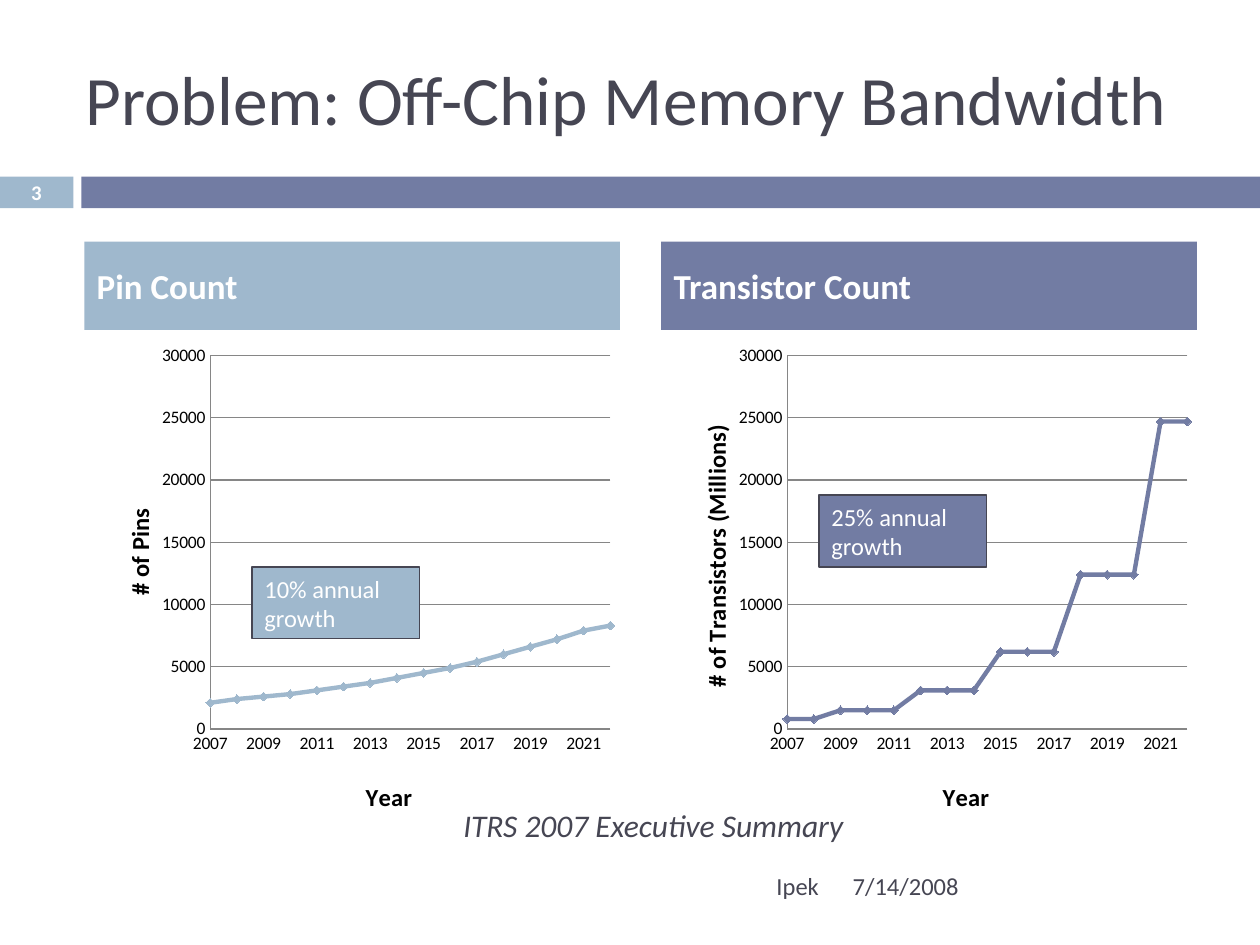
"""Build a slide that contrasts pin count growth with transistor count growth."""
import pptx
import pptx.chart.data
import pptx.dml.color
import pptx.enum.chart
import pptx.enum.shapes
import pptx.enum.text
import pptx.oxml
import pptx.oxml.ns
import pptx.util

Cm, Pt = pptx.util.Cm, pptx.util.Pt
ALIGN = pptx.enum.text.PP_ALIGN
ANCHOR = pptx.enum.text.MSO_ANCHOR
CHART = pptx.enum.chart

THEME = {
    "font": "Calibri",
    "sky": "9FB8CD", "slate": "727CA3", "ink": "464653",
    "white": "FFFFFF", "black": "000000", "grid": "868686",
    "title": 39.6, "head": 20, "source": 18, "note": 14, "page": 11.9, "tick": 10,
}
TITLE = "Problem: Off-Chip Memory Bandwidth"
YEARS = range(2007, 2023)
PANELS = [
    {"head": "Pin Count", "tone": "sky", "axis": "# of Pins", "top": 0.34,
     "note": "10% annual growth", "spot": (5.08, 11.43),
     "vals": [2100, 2400, 2600, 2800, 3100, 3400, 3700, 4100,
              4500, 4900, 5400, 6000, 6600, 7200, 7900, 8300]},
    {"head": "Transistor Count", "tone": "slate", "axis": "# of Transistors (Millions)",
     "top": 0.17, "note": "25% annual growth", "spot": (16.51, 9.98),
     "vals": [800] * 2 + [1500] * 3 + [3100] * 3 + [6200] * 3 + [12400] * 3 + [24700] * 2},
]
LABELS = [
    ("3", (0, 3.53, 1.47, 0.69), "page", "white", ALIGN.CENTER, {"bold": True}),
    ("ITRS 2007 Executive Summary", (9.09, 16.13, 8.2, 1.02), "source", "ink",
     ALIGN.LEFT, {"italic": True}),
    ("7/14/2008", (16.94, 17.35, 7.42, 1.02), "note", "ink", ALIGN.LEFT, {}),
    ("Ipek", (1.7, 17.35, 15.06, 1.02), "note", "ink", ALIGN.RIGHT, {}),
]
LEFT, STEP, WIDTH = 1.7, 11.63, 10.8
PLOT = {"x": 0.235, "y": 0.04, "w": 0.747, "h": 0.756}


def tint(name):
    return pptx.dml.color.RGBColor.from_string(THEME[name])


def style(font, size, tone, bold=False, italic=False):
    font.name, font.size = THEME["font"], Pt(THEME[size])
    font.bold, font.italic = bold, italic
    font.color.rgb = tint(tone)


def write(shape, text, size, tone, align=ALIGN.LEFT, **look):
    frame = shape.text_frame
    frame.text = text
    frame.word_wrap = True
    frame.auto_size = pptx.enum.text.MSO_AUTO_SIZE.NONE
    frame.vertical_anchor = ANCHOR.MIDDLE
    para = frame.paragraphs[0]
    para.alignment = align
    style(para.runs[0].font, size, tone, **look)
    return para


def block(slide, box, tone, edge=None):
    rect = pptx.enum.shapes.MSO_SHAPE.RECTANGLE
    shape = slide.shapes.add_shape(rect, *map(Cm, box))
    shape.shadow.inherit = False
    shape.fill.solid()
    shape.fill.fore_color.rgb = tint(tone)
    if edge:
        shape.line.color.rgb = tint(edge)
        shape.line.width = Pt(0.75)
    else:
        shape.line.fill.background()
    return shape


def layout(parent, spots, inner=False):
    for old in parent.findall(pptx.oxml.ns.qn("c:layout")):
        parent.remove(old)
    target = '<c:layoutTarget val="inner"/>' if inner else ""
    modes = "".join(f'<c:{key}Mode val="edge"/>' for key in "xy")
    sizes = "".join(f'<c:{key} val="{val}"/>' for key, val in spots.items())
    node = pptx.oxml.parse_xml(
        f'<c:layout {pptx.oxml.ns.nsdecls("c")}><c:manualLayout>'
        f"{target}{modes}{sizes}</c:manualLayout></c:layout>")
    if inner:
        parent.insert(0, node)
    else:
        parent.find(pptx.oxml.ns.qn("c:tx")).addnext(node)


def scale(axis, text, spot, low, high, unit):
    axis.minimum_scale, axis.maximum_scale, axis.major_unit = low, high, unit
    axis.major_tick_mark = axis.minor_tick_mark = CHART.XL_TICK_MARK.NONE
    axis.format.line.color.rgb = tint("grid")
    axis.tick_labels.number_format = "General"
    axis.tick_labels.number_format_is_linked = False
    style(axis.tick_labels.font, "tick", "black")
    frame = axis.axis_title.text_frame
    frame.text = text
    style(frame.paragraphs[0].runs[0].font, "note", "black", bold=True)
    layout(axis.axis_title._element, spot)


def graph(slide, panel, box):
    data = pptx.chart.data.XyChartData()
    points = data.add_series("Series 1")
    for year, val in zip(YEARS, panel["vals"]):
        points.add_data_point(year, val)
    kind = CHART.XL_CHART_TYPE.XY_SCATTER_LINES
    chart = slide.shapes.add_chart(kind, *map(Cm, box), data).chart
    chart.has_legend = chart.has_title = False
    style(chart.font, "tick", "black")
    scale(chart.category_axis, "Year", {"x": 0.517, "y": 0.89}, 2007, 2022, 2)
    scale(chart.value_axis, panel["axis"], {"x": 0.063, "y": panel["top"]}, 0, 30000, 5000)
    chart.category_axis.has_major_gridlines = False
    chart.value_axis.has_major_gridlines = True
    chart.value_axis.major_gridlines.format.line.color.rgb = tint("grid")
    layout(chart._chartSpace.chart.plotArea, PLOT, inner=True)
    plot = chart.plots[0]
    plot.vary_by_categories = False
    line = plot.series[0]
    line.smooth = False
    line.format.line.color.rgb = tint(panel["tone"])
    line.format.line.width = Pt(2.5)
    mark = line.marker
    mark.style, mark.size = CHART.XL_MARKER_STYLE.DIAMOND, 5
    mark.format.fill.solid()
    mark.format.fill.fore_color.rgb = tint(panel["tone"])
    mark.format.line.color.rgb = tint(panel["tone"])


def main():
    deck = pptx.Presentation()
    deck.slide_width, deck.slide_height = Cm(25.4), Cm(19.05)
    slide = deck.slides.add_slide(deck.slide_layouts[5])
    block(slide, (0, 3.56, 1.48, 0.64), "sky")
    block(slide, (1.64, 3.56, 23.76, 0.64), "slate")
    title = slide.shapes.title
    title.left, title.top, title.width, title.height = map(Cm, (1.47, 0.76, 22.66, 2.41))
    write(title, TITLE, "title", "ink")
    for col, panel in enumerate(PANELS):
        left = LEFT + col * STEP
        head = block(slide, (left, 4.87, WIDTH, 1.78), panel["tone"])
        para = write(head, panel["head"], "head", "white", bold=True)
        para.space_before = Pt(7)
        graph(slide, panel, (left, 6.77, WIDTH, 9.96))
        note = block(slide, (*panel["spot"], 3.38, 1.45), panel["tone"], "ink")
        write(note, panel["note"], "note", "white")
    for text, box, size, tone, align, look in LABELS:
        label = slide.shapes.add_textbox(*map(Cm, box))
        write(label, text, size, tone, align, **look)
    deck.save("out.pptx")


if __name__ == "__main__":
    main()
